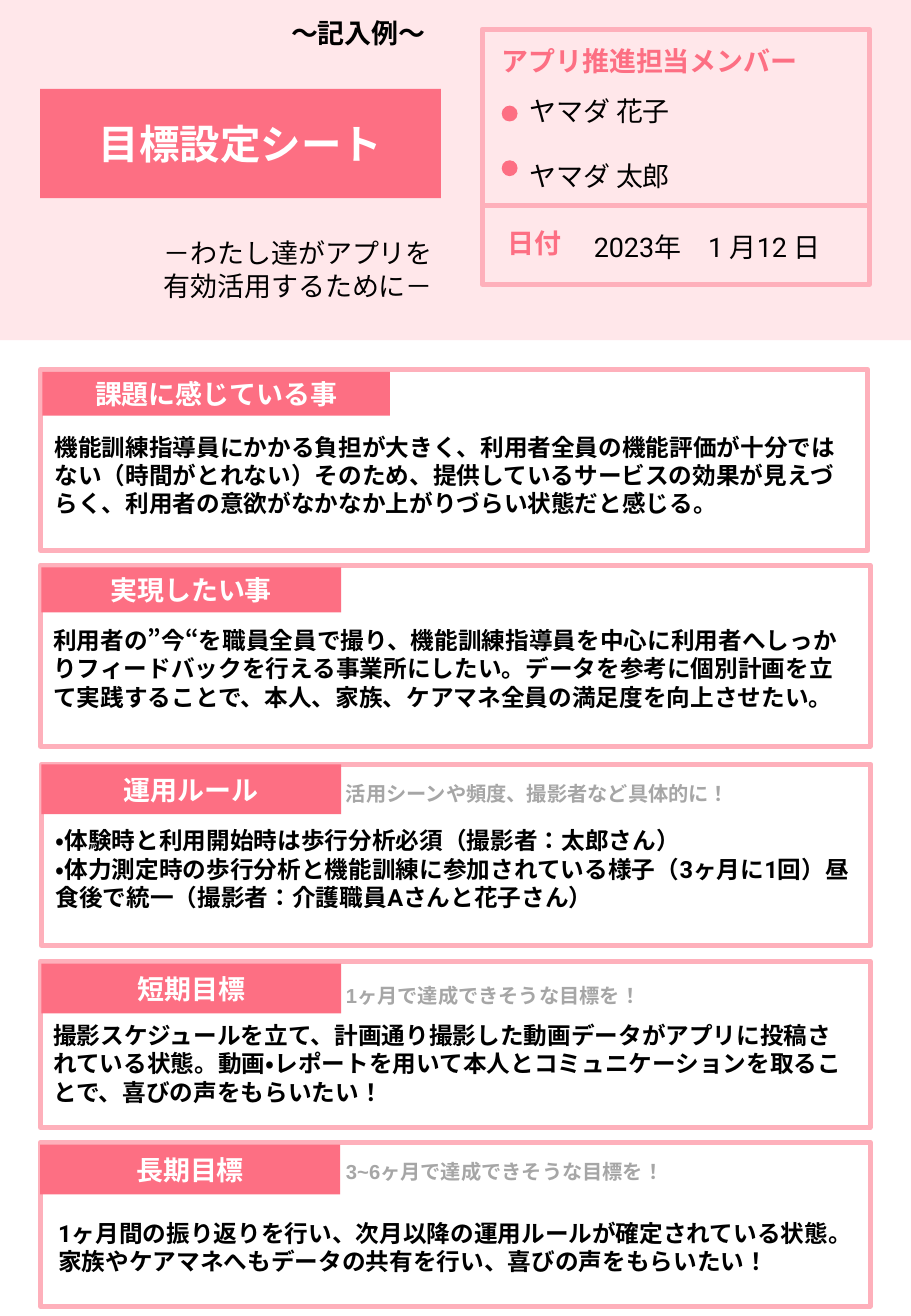
import pptx
import pptx.dml.color
import pptx.enum.lang
import pptx.enum.shapes
import pptx.enum.text
import pptx.util

Pt = pptx.util.Pt
SHAPE = pptx.enum.shapes.MSO_SHAPE
ALIGN = pptx.enum.text.PP_ALIGN
ANCHOR = pptx.enum.text.MSO_ANCHOR

BLUSH = "FFE7EA"
ROSE = "FD6F83"
BORDER = "FEB0BB"
WHITE = "FFFFFF"
BLACK = "000000"
GREY = "A6A6A6"

# Heading, tab (left, top, width, height), card (left, top, width, height),
# hint and its top, body and its (left, top)
SECTIONS = [
    ("課題に感じている事", (25.2, 220.3, 205.9, 26), (24, 218.9, 490.3, 107.3),
     "", 0,
     "機能訓練指導員にかかる負担が大きく、利用者全員の機能評価が十分ではない（時間がとれない）"
     "そのため、提供しているサービスの効果が見えづらく、利用者の意欲がなかなか上がりづらい状態だと感じる。",
     (25.2, 252.7)),
    ("実現したい事", (24.5, 336.2, 177.8, 26.7), (24, 334.8, 491.8, 107.3),
     "", 0,
     "利用者の”今“を職員全員で撮り、機能訓練指導員を中心に利用者へしっかりフィードバックを行える事業所にしたい。"
     "データを参考に個別計画を立て実践することで、本人、家族、ケアマネ全員の満足度を向上させたい。",
     (24.5, 367.2)),
    ("運用ルール", (24.5, 452.9, 177.8, 29.5), (24.5, 452.9, 491.8, 107.3),
     "活用シーンや頻度、撮影者など具体的に！", 459.4,
     "・体験時と利用開始時は歩行分析必須（撮影者：太郎さん）\n"
     "・体力測定時の歩行分析と機能訓練に参加されている様子（3ヶ月に1回）"
     "昼食後で統一（撮影者：介護職員Aさんと花子さん）",
     (25.9, 486)),
    ("短期目標", (24.5, 571, 177.8, 29.5), (24, 569.5, 491.8, 98.6),
     "1ヶ月で達成できそうな目標を！", 578.9,
     "撮影スケジュールを立て、計画通り撮影した動画データがアプリに投稿されている状態。"
     "動画・レポートを用いて本人とコミュニケーションを取ることで、喜びの声をもらいたい！",
     (24.5, 601.2)),
    ("長期目標", (23.8, 678.2, 177.8, 29.5), (24, 676.8, 491.8, 97.2),
     "3~6ヶ月で達成できそうな目標を！", 683.3,
     "1ヶ月間の振り返りを行い、次月以降の運用ルールが確定されている状態。"
     "家族やケアマネへもデータの共有を行い、喜びの声をもらいたい！",
     (27.4, 718.6)),
]


def colour(hex_string):
    return pptx.dml.color.RGBColor.from_string(hex_string)


def write(shape, text, size, hex_string, font="Arial", bold=False,
          align=ALIGN.LEFT, anchor=ANCHOR.TOP, gap=0):
    frame = shape.text_frame
    frame.word_wrap = True
    frame.auto_size = pptx.enum.text.MSO_AUTO_SIZE.NONE
    frame.vertical_anchor = anchor
    frame.text = text
    for index, paragraph in enumerate(frame.paragraphs):
        paragraph.alignment = align
        if index and gap:
            paragraph.space_before = Pt(gap)
        for run in paragraph.runs:
            run.font.name = font
            run.font.size = Pt(size)
            run.font.bold = bold
            run.font.color.rgb = colour(hex_string)
            run.font.language_id = pptx.enum.lang.MSO_LANGUAGE_ID.JAPANESE


def add_block(slide, box, fill=None, line=None, kind=SHAPE.RECTANGLE):
    block = slide.shapes.add_shape(kind, *map(Pt, box))
    block.shadow.inherit = False
    if fill:
        block.fill.solid()
        block.fill.fore_color.rgb = colour(fill)
    else:
        block.fill.background()
    if line:
        block.line.color.rgb = colour(line)
        block.line.width = Pt(3)
    else:
        block.line.fill.background()
    return block


def add_label(slide, box, text, size, hex_string, **style):
    label = slide.shapes.add_textbox(*map(Pt, box))
    write(label, text, size, hex_string, **style)


def add_title(slide, box, text):
    title = slide.shapes.title
    title.left, title.top, title.width, title.height = map(Pt, box)
    title.fill.solid()
    title.fill.fore_color.rgb = colour(ROSE)
    write(title, text, 24, WHITE, bold=True, align=ALIGN.CENTER, anchor=ANCHOR.MIDDLE)
    # Bring the title in front of the header band
    title.element.getparent().append(title.element)


def add_header(slide):
    add_block(slide, (0, 0, 540, 201.6), BLUSH)
    add_title(slide, (23.8, 52.6, 237.6, 64.8), "目標設定シート")
    add_label(slide, (164.2, 6.5, 96.5, 26.6), "～記入例～", 16, BLACK,
              bold=True, align=ALIGN.CENTER)
    add_label(slide, (90, 136.8, 187.9, 46), "－わたし達がアプリを\n有効活用するために－", 16, BLACK)


def add_member_panel(slide):
    for top, height in ((17.3, 107.3), (121.7, 46.8)):
        add_block(slide, (285.8, top, 229.7, height), BLUSH, BORDER)
    add_label(slide, (290.2, 23, 221.8, 26.6), "アプリ推進担当メンバー", 16, ROSE, bold=True)
    for top in (62.6, 95):
        add_block(slide, (297.4, top, 9.4, 9.4), ROSE, kind=SHAPE.OVAL)
    add_label(slide, (306.7, 52.6, 107.3, 65.5), "ヤマダ 花子\nヤマダ 太郎", 16, BLACK,
              font="Roboto", gap=19)
    add_label(slide, (293.8, 131, 55.4, 26.6), "日付", 16, ROSE, bold=True)
    add_label(slide, (344.9, 133.2, 158.4, 26.6), "2023年　1 月12 日", 16, BLACK, font="Roboto")


def add_section(slide, heading, tab_box, card_box, hint, hint_top, body, body_corner):
    add_block(slide, card_box, line=BORDER)
    tab = add_block(slide, tab_box, ROSE)
    write(tab, heading, 16, WHITE, bold=True, align=ALIGN.CENTER, anchor=ANCHOR.MIDDLE)
    if hint:
        add_label(slide, (198, hint_top, 294.5, 21.6), hint, 12, GREY, bold=True)
    add_label(slide, (*body_corner, 487.2, 58.3), body, 14, BLACK, font="Roboto", bold=True)


def main():
    deck = pptx.Presentation()
    deck.slide_width, deck.slide_height = Pt(540), Pt(779.76)
    slide = deck.slides.add_slide(deck.slide_layouts[5])
    add_header(slide)
    add_member_panel(slide)
    for section in SECTIONS:
        add_section(slide, *section)
    deck.save("out.pptx")


if __name__ == "__main__":
    main()
